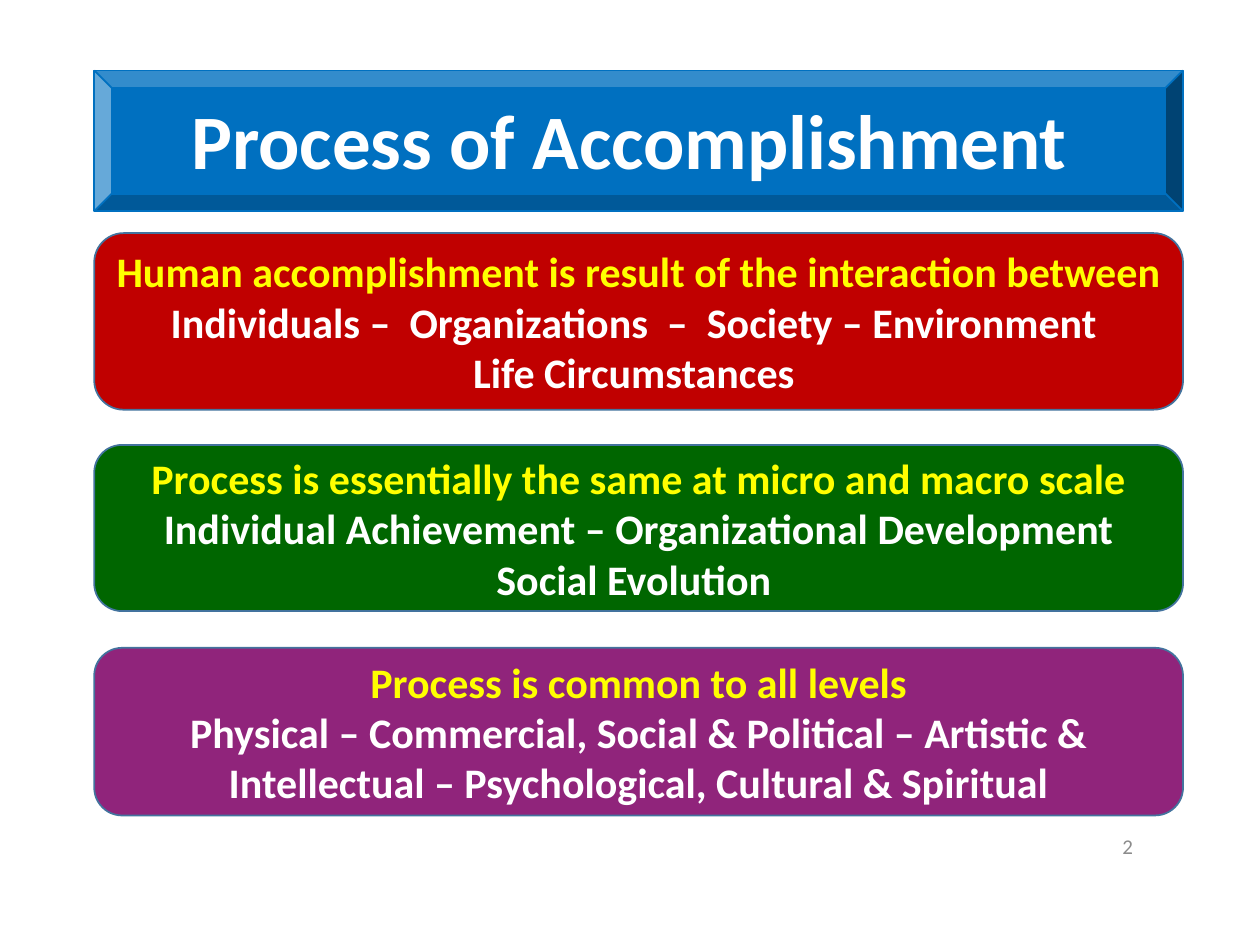
from collections import namedtuple
from dataclasses import dataclass

from pptx import Presentation
from pptx.dml.color import RGBColor
from pptx.enum.shapes import MSO_SHAPE
from pptx.enum.text import MSO_ANCHOR, PP_ALIGN
from pptx.util import Cm, Pt

Box = namedtuple("Box", "left top width height")


@dataclass(frozen=True)
class Theme:
    font: str = "Calibri"
    title_size: int = 44
    body_size: int = 24
    number_size: int = 12
    banner: str = "0070C0"
    outline: str = "43739E"
    heading: str = "FFFF00"
    text: str = "FFFFFF"
    number: str = "8C8C8C"


THEME = Theme()
LEFT, WIDTH = 1.9, 21.95

PANELS = [
    (4.7, 3.56, "C00000", [
        "Human accomplishment is result of the interaction between",
        "Individuals –  Organizations  –  Society – Environment \vLife Circumstances ",
    ]),
    (8.97, 3.35, "006600", [
        "Process is essentially the same at micro and macro scale",
        "Individual Achievement – Organizational Development",
        "Social Evolution ",
    ]),
    (13.06, 3.38, "90247B", [
        "Process is common to all levels",
        "Physical – Commercial, Social & Political – Artistic & Intellectual"
        " – Psychological, Cultural & Spiritual",
    ]),
]


def add_block(page, kind, box, fill, line):
    block = page.shapes.add_shape(kind, *map(Cm, box))
    block.shadow.inherit = False
    block.fill.solid()
    block.fill.fore_color.rgb = RGBColor.from_string(fill)
    block.line.color.rgb = RGBColor.from_string(line)
    block.line.width = Pt(1)
    return block


def prepare_frame(shape):
    frame = shape.text_frame
    frame.word_wrap = True
    frame.vertical_anchor = MSO_ANCHOR.MIDDLE
    return frame


def write_para(para, text, size, color, bold=True, align=PP_ALIGN.CENTER):
    para.text = text
    para.alignment = align
    para.font.name = THEME.font
    para.font.size = Pt(size)
    para.font.bold = bold
    para.font.color.rgb = RGBColor.from_string(color)


def add_banner(page, box, title):
    add_block(page, MSO_SHAPE.BEVEL, box, THEME.banner, THEME.banner)
    label_box = Box(box.left - 0.15, box.top + 0.03, box.width - 0.06, box.height + 0.08)
    label = page.shapes.add_textbox(*map(Cm, label_box))
    para = prepare_frame(label).paragraphs[0]
    write_para(para, title, THEME.title_size, THEME.text)
    para.line_spacing = 0.9


def add_panel(page, box, fill, lines):
    panel = add_block(page, MSO_SHAPE.ROUNDED_RECTANGLE, box, fill, THEME.outline)
    frame = prepare_frame(panel)
    frame.margin_left = frame.margin_right = Cm(0.2)
    for index, line in enumerate(lines):
        para = frame.add_paragraph() if index else frame.paragraphs[0]
        color = THEME.text if index else THEME.heading
        write_para(para, line, THEME.body_size, color)


def add_page_number(page, box, number):
    label = page.shapes.add_textbox(*map(Cm, box))
    para = prepare_frame(label).paragraphs[0]
    write_para(para, number, THEME.number_size, THEME.number, False, PP_ALIGN.RIGHT)


def main():
    deck = Presentation()
    deck.slide_width, deck.slide_height = Cm(25.4), Cm(19.05)
    page = deck.slides.add_slide(deck.slide_layouts[6])
    add_banner(page, Box(LEFT, 1.42, WIDTH, 2.84), "Process of Accomplishment")
    for top, height, fill, lines in PANELS:
        add_panel(page, Box(LEFT, top, WIDTH, height), fill, lines)
    add_page_number(page, Box(17.17, 16.54, 5.92, 1.02), "2")
    deck.save("out.pptx")


if __name__ == "__main__":
    main()
